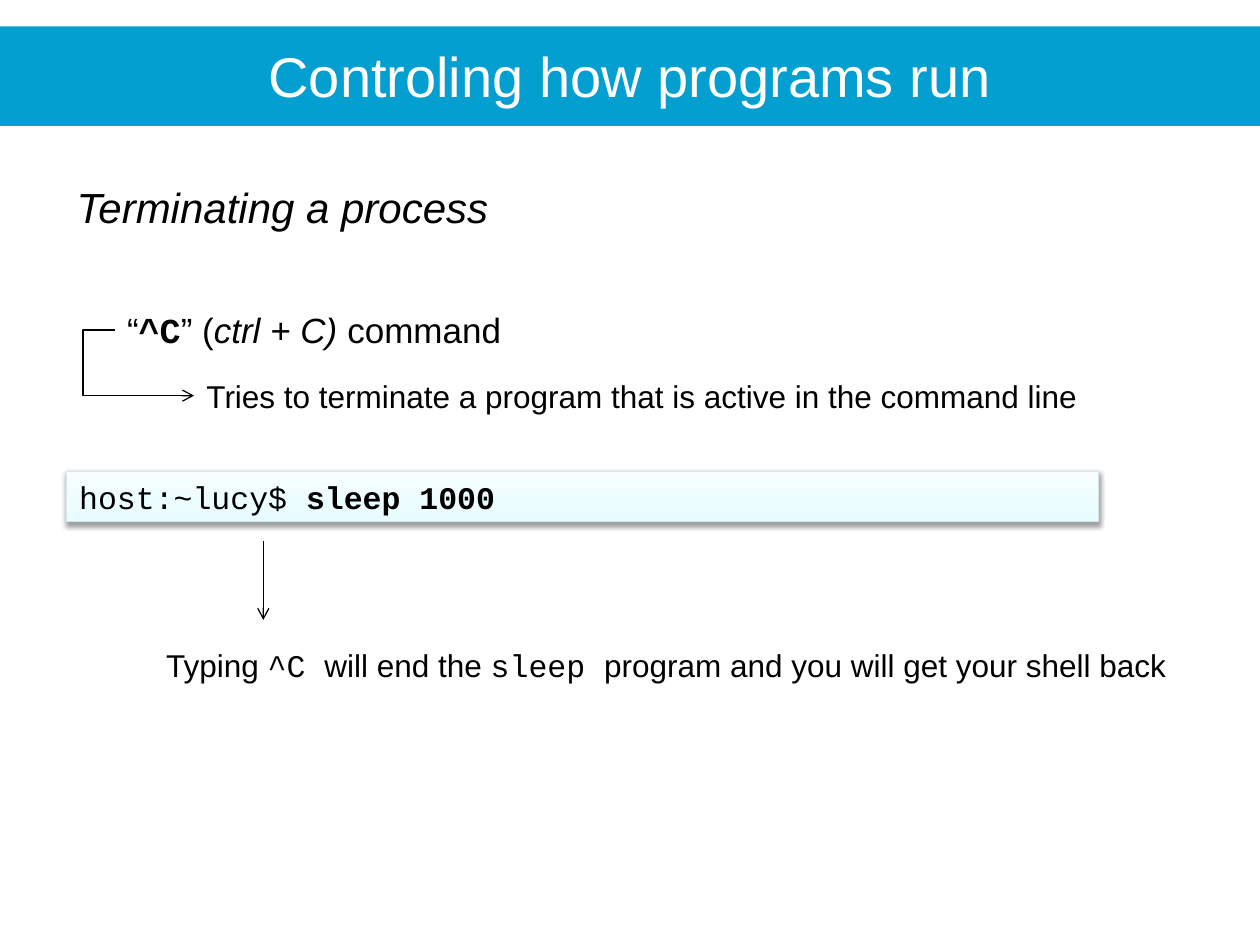
from copy import deepcopy

from lxml import etree
from pptx import Presentation
from pptx.dml.color import RGBColor
from pptx.enum import shapes, text
from pptx.oxml import parse_xml
from pptx.oxml.ns import nsdecls, qn
from pptx.util import Inches, Pt

BLUE = RGBColor(0x03, 0x9F, 0xD0)
WHITE = RGBColor(0xFF, 0xFF, 0xFF)
BLACK = RGBColor(0, 0, 0)
EDGE = RGBColor(0xD5, 0xE8, 0xEA)
SHADES = [(0, RGBColor(0xE6, 0xFD, 0xFF)),
          (0.35, RGBColor(0xEC, 0xFD, 0xFF)),
          (1, RGBColor(0xF8, 0xFE, 0xFF))]

SANS = {"name": "Arial"}
ITALIC = {"name": "Arial", "italic": True}
MONO = {"name": "Courier New"}
MONO_BOLD = {"name": "Courier New", "bold": True}

BANNER = (0, 0.21, 10, 0.79)
TITLE = ((0, 0.28, 10, 0.64), 32, [("Controling how programs run", SANS)])
NOTES = [
    ((0.51, 1.39, 7.56, 0.5), 24, [("Terminating a process", ITALIC)]),
    ((0.91, 2.4, 7.32, 0.44), 20, [
        ("“", SANS), ("^C", MONO_BOLD), ("” (", SANS),
        ("ctrl + C) ", ITALIC), ("command", SANS)]),
    ((1.54, 2.94, 8.11, 0.4), 18, [
        ("Tries to terminate a program that is active in the command line", SANS)]),
    ((1.22, 5.08, 8.19, 0.4), 18, [
        ("Typing ", SANS), ("^C ", MONO), ("will end the ", SANS),
        ("sleep ", MONO), ("program and you will get your shell back", SANS)]),
]
TERMINAL = ((0.53, 3.74, 8.19, 0.4), 18,
            [("host:~lucy$ ", MONO), ("sleep 1000", MONO_BOLD)])
ELBOW = (0.91, 2.62, 1.54, 3.14)
ELBOW_LEFT = 0.66
DOWN = (2.09, 4.29, 2.09, 4.92)


def inches(values):
    return [Inches(v) for v in values]


def write(sp, size, runs, color=BLACK, align=text.PP_ALIGN.LEFT):
    tf = sp.text_frame
    tf.word_wrap = True
    tf.auto_size = text.MSO_AUTO_SIZE.SHAPE_TO_FIT_TEXT
    p = tf.paragraphs[0]
    p.alignment = align
    for words, style in runs:
        r = p.add_run()
        r.text = words
        r.font.size = Pt(size)
        r.font.color.rgb = color
        for key, value in style.items():
            setattr(r.font, key, value)


def add_rect(s, box):
    sp = s.shapes.add_shape(shapes.MSO_SHAPE.RECTANGLE, *inches(box))
    sp.shadow.inherit = False
    return sp


def add_note(s, box, size, runs, **format_values):
    write(s.shapes.add_textbox(*inches(box)), size, runs, **format_values)


def add_arrow(s, kind, ends):
    c = s.shapes.add_connector(kind, *inches(ends))
    c.line.color.rgb = BLACK
    c.line.width = Pt(0.75)
    etree.SubElement(c.line._get_or_add_ln(), qn("a:tailEnd"), type="arrow")
    etree.SubElement(c._element.spPr, qn("a:effectLst"))
    return c


def add_terminal(s, box, size, runs):
    """Command-line box with a pale gradient and a soft shadow below."""
    sp = add_rect(s, box)
    sp.fill.gradient()
    sp.fill.gradient_angle = 90
    stop_list = sp._element.spPr.find(".//" + qn("a:gsLst"))
    stop_list.append(deepcopy(stop_list[0]))
    for stop, (position, color) in zip(sp.fill.gradient_stops, SHADES):
        stop.position = position
        stop.color.rgb = color
    sp.line.color.rgb = EDGE
    sp.line.width = Pt(0.75)
    sp._element.spPr.find(qn("a:effectLst")).append(parse_xml(
        f'<a:outerShdw {nsdecls("a")} blurRad="{Pt(3.1)}" dist="{Pt(1.6)}" '
        'dir="5400000" rotWithShape="0"><a:srgbClr val="000000">'
        '<a:alpha val="38000"/></a:srgbClr></a:outerShdw>'))
    write(sp, size, runs)


def main():
    prs = Presentation()
    prs.slide_width, prs.slide_height = inches((10, 7.5))
    s = prs.slides.add_slide(prs.slide_layouts[6])

    banner = add_rect(s, BANNER)
    banner.fill.solid()
    banner.fill.fore_color.rgb = BLUE
    banner.line.fill.background()
    add_note(s, *TITLE, color=WHITE, align=text.PP_ALIGN.CENTER)

    for note in NOTES:
        add_note(s, *note)
    add_terminal(s, *TERMINAL)

    elbow = add_arrow(s, shapes.MSO_CONNECTOR.ELBOW, ELBOW)
    x1, _, x2, _ = ELBOW
    bend = round((ELBOW_LEFT - x1) / (x2 - x1) * 100000)
    geometry = elbow._element.spPr.find(qn("a:prstGeom"))
    guides = geometry.find(qn("a:avLst"))
    etree.SubElement(guides, qn("a:gd"), name="adj1", fmla=f"val {bend}")
    add_arrow(s, shapes.MSO_CONNECTOR.STRAIGHT, DOWN)

    prs.save("out.pptx")


if __name__ == "__main__":
    main()
